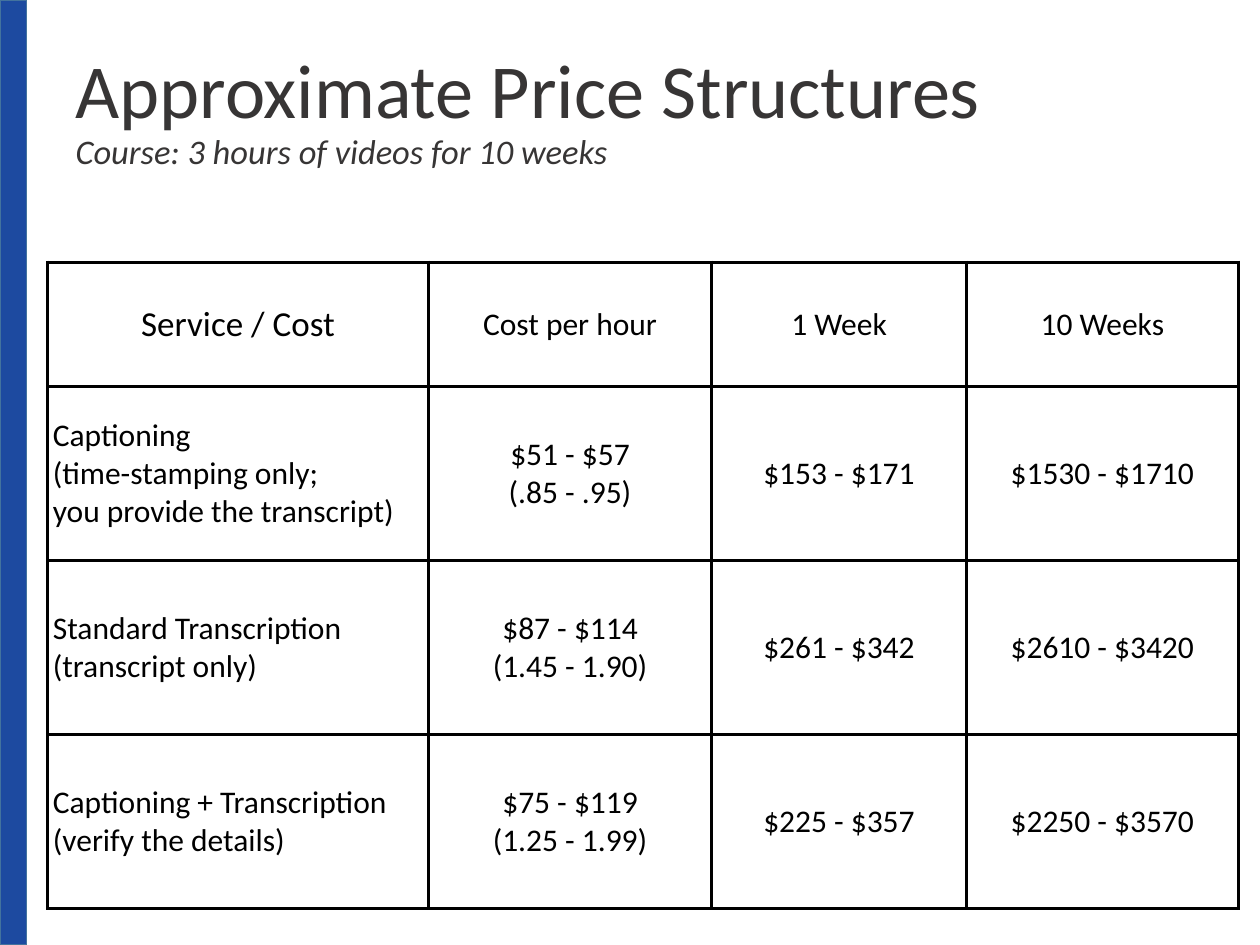
from lxml.etree import SubElement
from pptx import Presentation
from pptx.dml.color import RGBColor
from pptx.enum.shapes import MSO_SHAPE
from pptx.enum.text import MSO_ANCHOR, MSO_AUTO_SIZE, PP_ALIGN
from pptx.oxml.ns import qn
from pptx.util import Inches, Pt

FONT = "Calibri"
BLUE = RGBColor(0x1D, 0x4A, 0xA0)
BAR_EDGE = RGBColor(0x43, 0x73, 0x9E)
DARK_GRAY = RGBColor(0x37, 0x35, 0x35)
BLACK = RGBColor(0, 0, 0)

COLUMN_WIDTHS = [3.02, 2.25, 2.02, 2.16]
HEADER_HEIGHT, ROW_HEIGHT = 0.99, 1.38
# "\n" starts a paragraph, "\v" breaks a line
PRICES = [
    ["Service / Cost", "Cost per hour", "1 Week", "10 Weeks"],
    ["Captioning \v(time-stamping only; \vyou provide the transcript)",
     "$51 - $57\n(.85 - .95)", "$153 - $171", "$1530 - $1710"],
    ["Standard Transcription\v(transcript only)",
     "$87 - $114\n(1.45 - 1.90)", "$261 - $342", "$2610 - $3420"],
    ["Captioning + Transcription\n(verify the details)",
     "$75 - $119\n(1.25 - 1.99)", "$225 - $357", "$2250 - $3570"],
]


def format_run(run, size, color, italic=False):
    run.font.name = FONT
    run.font.size = Pt(size)
    run.font.color.rgb = color
    run.font.italic = italic


def add_side_bar(slide):
    bar = slide.shapes.add_shape(
        MSO_SHAPE.RECTANGLE, 0, 0, Inches(0.21), Inches(7.5))
    bar.shadow.inherit = False
    bar.fill.solid()
    bar.fill.fore_color.rgb = BLUE
    bar.line.color.rgb = BAR_EDGE
    bar.line.width = Pt(1)


def fill_title(slide):
    title = slide.shapes.title
    title.left, title.top = Inches(0.5), Inches(0.09)
    title.width, title.height = Inches(9), Inches(1.6)
    frame = title.text_frame
    frame.text = "Approximate Price Structures\vCourse: 3 hours of videos for 10 weeks"
    frame.auto_size = MSO_AUTO_SIZE.NONE
    frame.vertical_anchor = MSO_ANCHOR.MIDDLE
    frame.margin_left = frame.margin_right = Inches(0.1)
    frame.margin_top = frame.margin_bottom = Inches(0.06)
    paragraph = frame.paragraphs[0]
    paragraph.alignment = PP_ALIGN.LEFT
    paragraph.line_spacing = 0.9
    heading, subtitle = paragraph.runs
    format_run(heading, 43.6, DARK_GRAY)
    format_run(subtitle, 19.7, DARK_GRAY, italic=True)


def set_borders(cell, color, width):
    properties = cell._tc.get_or_add_tcPr()
    for side in ("a:lnL", "a:lnR", "a:lnT", "a:lnB"):
        line = SubElement(properties, qn(side), w=str(Pt(width)))
        fill = SubElement(line, qn("a:solidFill"))
        SubElement(fill, qn("a:srgbClr"), val=str(color))


def fill_cell(cell, text, size, alignment, margin):
    set_borders(cell, BLACK, 2)
    cell.fill.background()
    cell.vertical_anchor = MSO_ANCHOR.MIDDLE
    cell.margin_left = cell.margin_right = Inches(margin)
    cell.margin_top = cell.margin_bottom = Inches(margin)
    cell.text_frame.text = text
    for paragraph in cell.text_frame.paragraphs:
        paragraph.alignment = alignment
        for run in paragraph.runs:
            format_run(run, size, BLACK)
            run.font.bold = False


def add_price_table(slide):
    row_heights = [HEADER_HEIGHT] + [ROW_HEIGHT] * (len(PRICES) - 1)
    table = slide.shapes.add_table(
        len(PRICES), len(COLUMN_WIDTHS), Inches(0.38), Inches(2.08),
        Inches(sum(COLUMN_WIDTHS)), Inches(sum(row_heights))).table
    table.first_row = table.horz_banding = False
    for column, width in zip(table.columns, COLUMN_WIDTHS):
        column.width = Inches(width)
    for row, height in zip(table.rows, row_heights):
        row.height = Inches(height)
    for i, texts in enumerate(PRICES):
        for j, text in enumerate(texts):
            label = i > 0 and j == 0
            fill_cell(table.cell(i, j), text,
                      size=20 if i == j == 0 else 18,
                      alignment=PP_ALIGN.LEFT if label else PP_ALIGN.CENTER,
                      margin=0.04 if i == 0 or j == 0 else 0.05)


def main():
    presentation = Presentation()
    presentation.slide_width, presentation.slide_height = Inches(10), Inches(7.5)
    slide = presentation.slides.add_slide(presentation.slide_layouts[5])
    add_side_bar(slide)
    fill_title(slide)
    add_price_table(slide)
    presentation.save("out.pptx")


if __name__ == "__main__":
    main()
